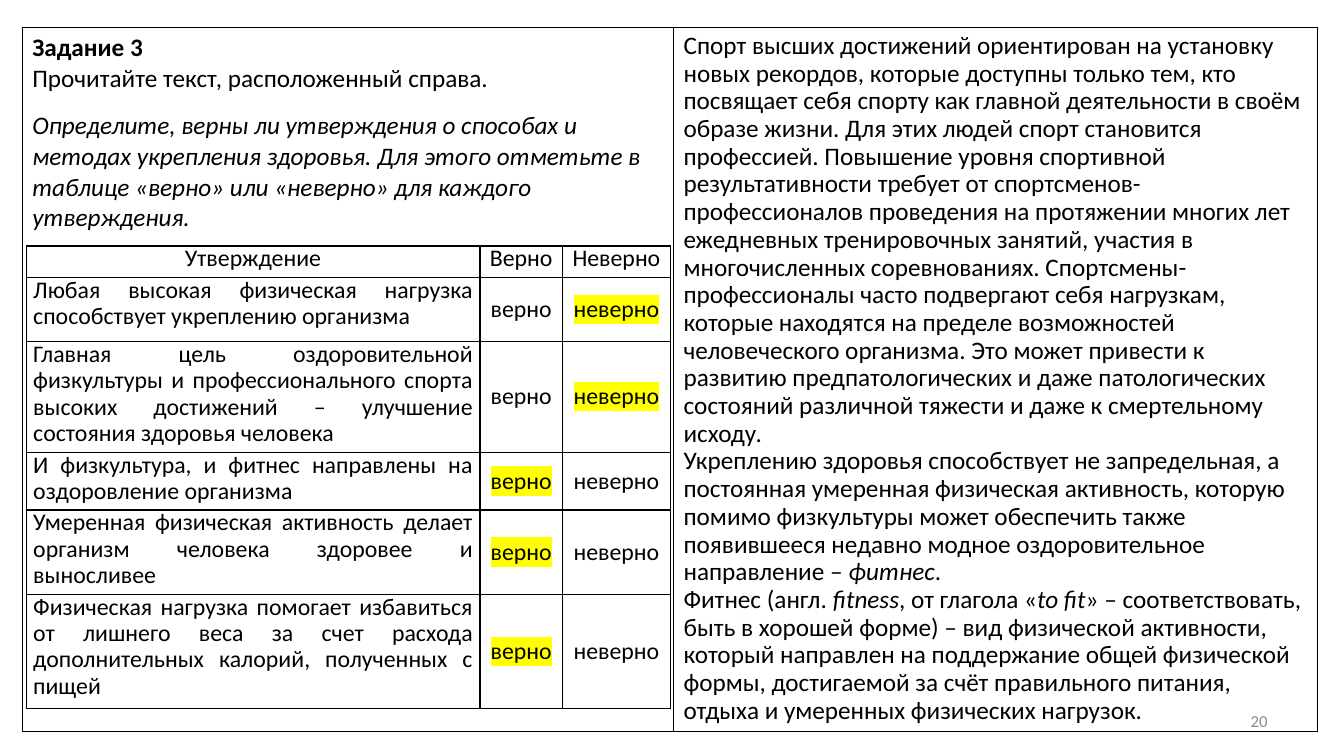
from lxml.etree import SubElement
from pptx import Presentation
from pptx.dml.color import RGBColor
from pptx.enum.text import MSO_ANCHOR, PP_ALIGN
from pptx.oxml.ns import qn
from pptx.util import Inches, Pt

TASK = [
    "Задание 3",
    "Прочитайте текст, расположенный справа.",
    "*Определите, верны ли утверждения о способах и методах укрепления здоровья. "
    "Для этого отметьте в таблице «верно» или «неверно» для каждого утверждения.*",
]
READING = [
    "Спорт высших достижений ориентирован на установку новых рекордов, которые доступны "
    "только тем, кто посвящает себя спорту как главной деятельности в своём образе жизни. "
    "Для этих людей спорт становится профессией. Повышение уровня спортивной "
    "результативности требует от спортсменов-профессионалов проведения на протяжении "
    "многих лет ежедневных тренировочных занятий, участия в многочисленных соревнованиях. "
    "Спортсмены-профессионалы часто подвергают себя нагрузкам, которые находятся на пределе "
    "возможностей человеческого организма. Это может привести к развитию предпатологических "
    "и даже патологических состояний различной тяжести и даже к смертельному исходу.",
    "Укреплению здоровья способствует не запредельная, а постоянная умеренная физическая "
    "активность, которую помимо физкультуры может обеспечить также появившееся недавно "
    "модное оздоровительное направление – *фитнес*.",
    "Фитнес (англ. *fitness*, от глагола «*to fit*» – соответствовать, быть в хорошей форме) "
    "– вид физической активности, который направлен на поддержание общей физической формы, "
    "достигаемой за счёт правильного питания, отдыха и умеренных физических нагрузок.",
]
HEADINGS = ["Утверждение", "Верно", "Неверно"]
ANSWERS = ["верно", "неверно"]
STATEMENTS = [
    ("Любая высокая физическая нагрузка способствует укреплению организма", "неверно"),
    ("Главная цель оздоровительной физкультуры и профессионального спорта высоких "
     "достижений – улучшение состояния здоровья человека", "неверно"),
    ("И физкультура, и фитнес направлены на оздоровление организма", "верно"),
    ("Умеренная физическая активность делает организм человека здоровее и выносливее", "верно"),
    ("Физическая нагрузка помогает избавиться от лишнего веса за счет расхода "
     "дополнительных калорий, полученных с пищей", "верно"),
]


def color(value):
    return RGBColor.from_string(value)


class SlideBuilder:
    font_name = "Calibri"
    ink = "000000"
    muted = "8C8C8C"
    marker = "FFFF00"
    border_width = Pt(1)

    def __init__(self, slide):
        self.slide = slide

    def add_table(self, left, top, column_widths, row_heights):
        frame = self.slide.shapes.add_table(
            len(row_heights), len(column_widths), Inches(left), Inches(top),
            Inches(sum(column_widths)), Inches(sum(row_heights)))
        table = frame.table
        table.first_row = table.horz_banding = False
        for column, width in zip(table.columns, column_widths):
            column.width = Inches(width)
        for row, height in zip(table.rows, row_heights):
            row.height = Inches(height)
        for cell in table.iter_cells():
            self.add_borders(cell)
            cell.fill.background()
        return table

    def add_borders(self, cell):
        properties = cell._tc.get_or_add_tcPr()
        for side in ("a:lnL", "a:lnR", "a:lnT", "a:lnB"):
            line = SubElement(properties, qn(side), w=str(self.border_width))
            fill = SubElement(line, qn("a:solidFill"))
            SubElement(fill, qn("a:srgbClr"), val=self.ink)

    def set_text(self, paragraph, text, size, ink=ink, align=PP_ALIGN.LEFT, spacing=1.0):
        """Fill a paragraph; text between asterisks is italic."""
        paragraph.alignment = align
        paragraph.line_spacing = spacing
        font = paragraph.font
        font.name, font.size, font.bold = self.font_name, Pt(size), False
        font.color.rgb = color(ink)
        for index, part in enumerate(text.split("*")):
            if part:
                run = paragraph.add_run()
                run.text = part
                if index % 2:
                    run.font.italic = True

    def fill_page_cell(self, cell, texts, spacing=1.0):
        text_frame = cell.text_frame
        for index, text in enumerate(texts):
            paragraph = text_frame.add_paragraph() if index else text_frame.paragraphs[0]
            self.set_text(paragraph, text, 18, spacing=spacing)
        return text_frame.paragraphs

    def fill_quiz_cell(self, cell, text, align, answer=False):
        cell.margin_left = cell.margin_right = Inches(0.07)
        cell.margin_top = cell.margin_bottom = 0
        cell.vertical_anchor = MSO_ANCHOR.MIDDLE if answer else MSO_ANCHOR.TOP
        paragraph = cell.text_frame.paragraphs[0]
        self.set_text(paragraph, text, 17, align=align, spacing=0.9)
        if not answer:
            paragraph.space_after = Pt(8)
        return paragraph

    def highlight(self, run):
        highlight = SubElement(run._r.get_or_add_rPr(), qn("a:highlight"))
        SubElement(highlight, qn("a:srgbClr"), val=self.marker)

    def add_page_number(self, text):
        box = self.slide.shapes.add_textbox(Inches(9.56), Inches(6.95), Inches(3.11), Inches(0.4))
        box.text_frame.word_wrap = True
        box.text_frame.vertical_anchor = MSO_ANCHOR.MIDDLE
        self.set_text(box.text_frame.paragraphs[0], text, 12, self.muted, PP_ALIGN.RIGHT)


def main():
    presentation = Presentation()
    presentation.slide_width, presentation.slide_height = Inches(13.33), Inches(7.5)
    builder = SlideBuilder(presentation.slides.add_slide(presentation.slide_layouts[6]))

    page = builder.add_table(0.22, 0.27, [6.46, 6.39], [6.99])
    heading, _, instruction = builder.fill_page_cell(page.cell(0, 0), TASK)
    heading.font.bold = True
    instruction.space_before = Pt(12)
    builder.fill_page_cell(page.cell(0, 1), READING, spacing=0.9)

    builder.add_page_number("20")

    quiz = builder.add_table(0.26, 2.44, [4.5, 0.82, 1.07], [0.31, 0.64, 1.1, 0.57, 0.84, 1.13])
    for column, text in enumerate(HEADINGS):
        builder.fill_quiz_cell(quiz.cell(0, column), text, PP_ALIGN.CENTER)
    for row, (statement, correct) in enumerate(STATEMENTS, 1):
        builder.fill_quiz_cell(quiz.cell(row, 0), statement, PP_ALIGN.JUSTIFY)
        for column, answer in enumerate(ANSWERS, 1):
            paragraph = builder.fill_quiz_cell(
                quiz.cell(row, column), answer, PP_ALIGN.CENTER, answer=True)
            if answer == correct:
                builder.highlight(paragraph.runs[0])

    presentation.save("out.pptx")


if __name__ == "__main__":
    main()
